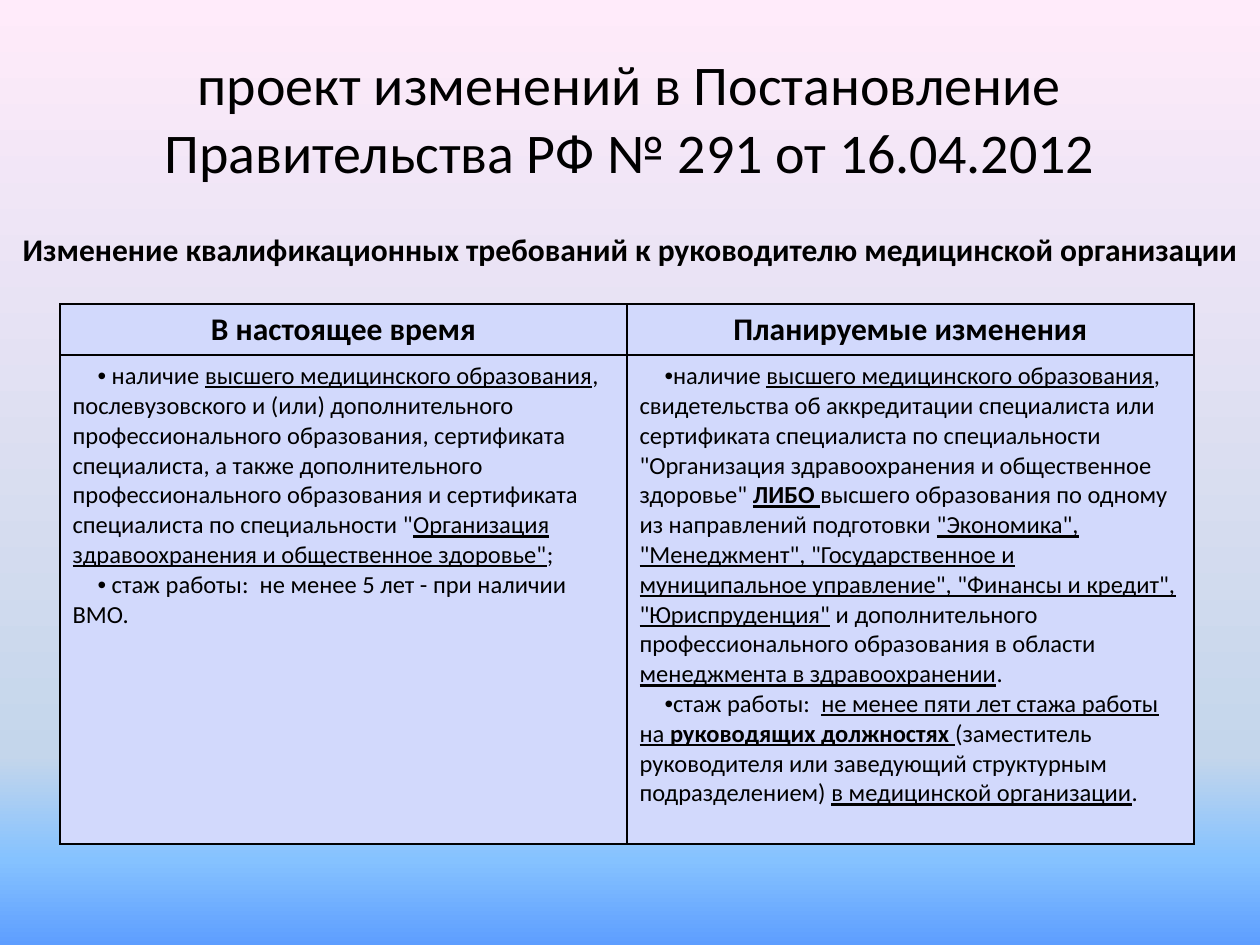
from lxml import etree
from pptx import Presentation
from pptx.dml.color import RGBColor
from pptx.enum.text import MSO_ANCHOR, PP_ALIGN
from pptx.oxml.ns import qn
from pptx.util import Emu, Pt

PX = 914400 // 126
CENTER, LEFT = PP_ALIGN.CENTER, PP_ALIGN.LEFT
MIDDLE, TOP = MSO_ANCHOR.MIDDLE, MSO_ANCHOR.TOP

BLACK = RGBColor(0x00, 0x00, 0x00)
LAVENDER = RGBColor(0xD2, 0xD9, 0xFC)
SKY_STOPS = [
    (0, RGBColor(0x5E, 0x9E, 0xFF)),
    (9, RGBColor(0x85, 0xC2, 0xFF)),
    (20, RGBColor(0xC4, 0xD6, 0xEB)),
    (100, RGBColor(0xFF, 0xEB, 0xFA)),
]

TITLE = "проект изменений в Постановление Правительства РФ № 291 от 16.04.2012"
SUBTITLE = "Изменение квалификационных требований к руководителю медицинской организации"
HEADINGS = ["В настоящее время", "Планируемые изменения"]

# Each requirement is a list of (text, marks): u = underlined, b = bold
CURRENT = [
    [
        (" наличие ", ""),
        ("высшего медицинского образования", "u"),
        (", послевузовского и (или) дополнительного профессионального образования, "
         "сертификата специалиста, а также дополнительного профессионального "
         "образования и сертификата специалиста по специальности \"", ""),
        ("Организация здравоохранения и общественное здоровье\"", "u"),
        (";", ""),
    ],
    [(" стаж работы:  не менее 5 лет - при наличии ВМО.", "")],
]
PLANNED = [
    [
        ("наличие ", ""),
        ("высшего медицинского образования", "u"),
        (", свидетельства об аккредитации специалиста или сертификата специалиста "
         "по специальности \"Организация здравоохранения и общественное здоровье\" ", ""),
        ("ЛИБО ", "bu"),
        ("высшего образования по одному из направлений подготовки ", ""),
        ("\"Экономика\", \"Менеджмент\", \"Государственное и муниципальное управление\", "
         "\"Финансы и кредит\", \"Юриспруденция\"", "u"),
        (" и дополнительного профессионального образования в области ", ""),
        ("менеджмента в здравоохранении", "u"),
        (".", ""),
    ],
    [
        ("стаж работы:  ", ""),
        ("не менее пяти лет стажа работы на ", "u"),
        ("руководящих должностях", "bu"),
        (" ", "u"),
        ("(заместитель руководителя или заведующий структурным подразделением) ", ""),
        ("в медицинской организации", "u"),
        (".", ""),
    ],
]


class SlideBuilder:
    font = "Calibri"
    bullet_indent = 25

    def __init__(self, slide):
        self.slide = slide

    def background(self, stops):
        fill = self.slide.background.fill
        fill.gradient()
        fill.gradient_angle = 90
        stop_list = self.slide.element.find(".//" + qn("a:gsLst"))
        for old_stop in list(stop_list):
            stop_list.remove(old_stop)
        for percent, color in stops:
            stop = etree.SubElement(stop_list, qn("a:gs"), pos=str(percent * 1000))
            etree.SubElement(stop, qn("a:srgbClr"), val=str(color))

    def paragraph(self, paragraph, runs, size, align=LEFT, bullet=False):
        paragraph.alignment = align
        if bullet:
            props = paragraph._p.get_or_add_pPr()
            props.set("marL", "0")
            props.set("indent", str(self.bullet_indent * PX))
            etree.SubElement(props, qn("a:buFont"), typeface="Arial")
            etree.SubElement(props, qn("a:buChar"), char="•")
        for text, marks in runs:
            run = paragraph.add_run()
            run.text = text
            style = {"name": self.font, "size": Pt(size),
                     "bold": "b" in marks, "underline": "u" in marks}
            for name, value in style.items():
                setattr(run.font, name, value)
            run.font.color.rgb = BLACK

    def text(self, box, text, size, marks="", anchor=TOP, wrap=True):
        frame = self.slide.shapes.add_textbox(*(Emu(v * PX) for v in box)).text_frame
        for name, value in {"word_wrap": wrap, "vertical_anchor": anchor}.items():
            setattr(frame, name, value)
        self.paragraph(frame.paragraphs[0], [(text, marks)], size, CENTER)

    def cell(self, cell, paragraphs, **style):
        props = cell._tc.get_or_add_tcPr()
        for side in ("lnL", "lnR", "lnT", "lnB"):
            line = etree.SubElement(props, qn("a:" + side), w=str(Pt(1)))
            solid = etree.SubElement(line, qn("a:solidFill"))
            etree.SubElement(solid, qn("a:srgbClr"), val=str(BLACK))
        cell.fill.solid()
        cell.fill.fore_color.rgb = LAVENDER
        frame = cell.text_frame
        for i, runs in enumerate(paragraphs):
            paragraph = frame.add_paragraph() if i else frame.paragraphs[0]
            self.paragraph(paragraph, runs, **style)

    def table(self, left, top, col_width, row_heights, headings, columns):
        box = (left, top, col_width * len(headings), sum(row_heights))
        table = self.slide.shapes.add_table(
            len(row_heights), len(headings), *(Emu(v * PX) for v in box)).table
        table.horz_banding = False
        for row, height in zip(table.rows, row_heights):
            row.height = Emu(height * PX)
        for i, (heading, items) in enumerate(zip(headings, columns)):
            table.columns[i].width = Emu(col_width * PX)
            self.cell(table.cell(0, i), [[(heading, "b")]], size=18, align=CENTER)
            self.cell(table.cell(1, i), items, size=14, bullet=True)


def main():
    prs = Presentation()
    prs.slide_width, prs.slide_height = Emu(1260 * PX), Emu(945 * PX)
    builder = SlideBuilder(prs.slides.add_slide(prs.slide_layouts[6]))

    builder.background(SKY_STOPS)

    # Title and subtitle
    builder.text((63, 38, 1134, 158), TITLE, 32, anchor=MIDDLE)
    builder.text((5, 224, 1251, 51), SUBTITLE, 18, marks="b", wrap=False)

    # Comparison of requirements
    builder.table(60, 304, 567, [51, 489], HEADINGS, [CURRENT, PLANNED])

    prs.save("out.pptx")


if __name__ == "__main__":
    main()
